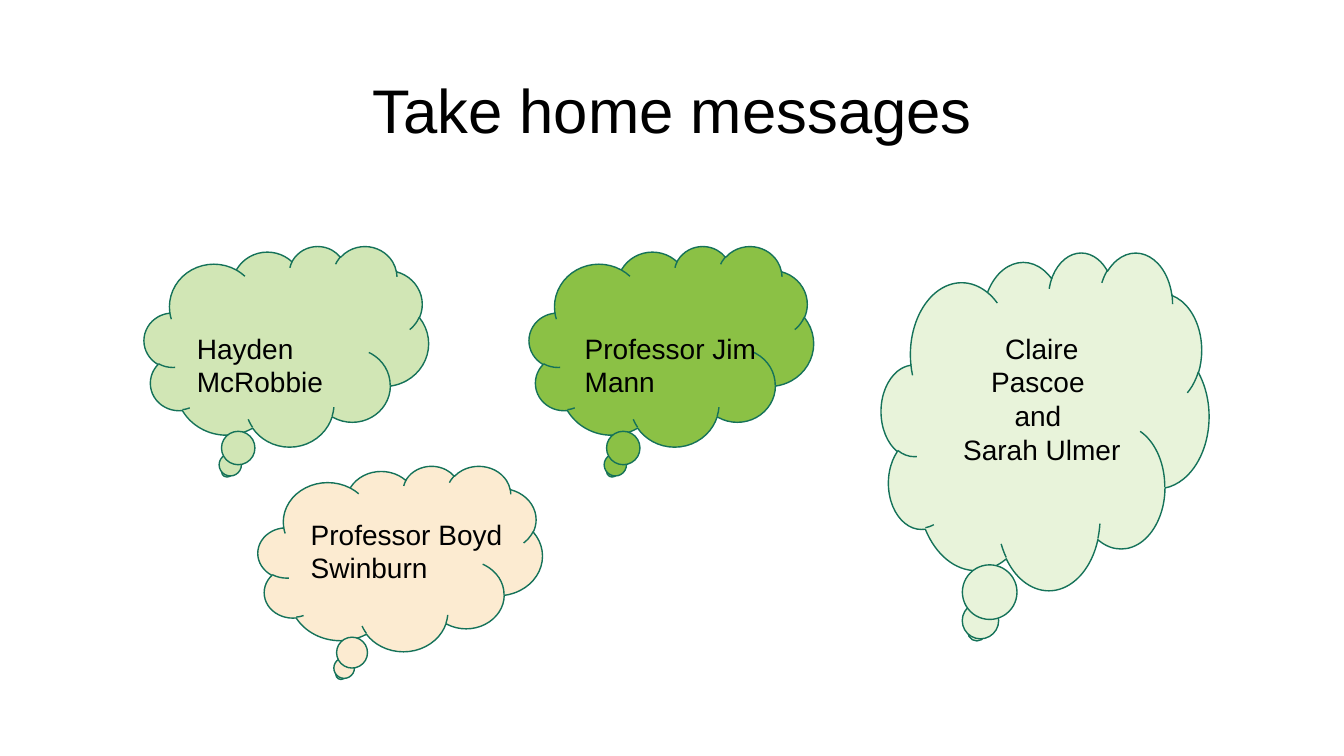
from pptx import Presentation
from pptx.dml.color import RGBColor
from pptx.enum.shapes import MSO_SHAPE
from pptx.enum.text import MSO_ANCHOR, PP_ALIGN
from pptx.util import Inches, Pt

CLOUD = MSO_SHAPE.CLOUD_CALLOUT
TOP, MIDDLE = MSO_ANCHOR.TOP, MSO_ANCHOR.MIDDLE
LEFT, CENTER = PP_ALIGN.LEFT, PP_ALIGN.CENTER
WIDE, HIGH = Inches(13.33), Inches(7.5)
INK, EDGE = "000000", "157259"

CLOUDS = [
    ((0.1073, 0.3253, 0.2116, 0.2653), "D1E6B5",
     (0.15, 0.4, 0.8, 0.39), ["Hayden McRobbie"], LEFT),
    ((0.3938, 0.3253, 0.2116, 0.2653), "8BC145",
     (0.16, 0.4, 0.73, 0.39), ["Professor Jim Mann"], LEFT),
    ((0.6557, 0.3333, 0.2438, 0.4467), "E8F3DA",
     (0.21, 0.22, 0.56, 0.43),
     ["Claire Pascoe ", "and ", "Sarah Ulmer "], CENTER),
    ((0.192, 0.616, 0.2116, 0.2453), "FCEBD1",
     (0.15, 0.25, 0.86, 0.42), ["Professor Boyd Swinburn"], LEFT),
]


def color(code):
    """Turn a hex string into a colour."""
    return RGBColor.from_string(code)


def inner(box, part):
    """Place a part, given in shares, inside a box."""
    x, y, w, h = box
    left, top, wide, high = part
    return (int(x + left * w), int(y + top * h),
            int(wide * w), int(high * h))


def label(slide, box, lines, size, align, anchor=TOP):
    """Write lines of text in a wrapping box."""
    frame = slide.shapes.add_textbox(*box).text_frame
    frame.word_wrap = True
    frame.vertical_anchor = anchor
    frame.text = "\n".join(lines)
    for para in frame.paragraphs:
        para.alignment = align
        font = para.runs[0].font
        font.name, font.size = "Arial", Pt(size)
        font.color.rgb = color(INK)
    return frame


def title(slide, box):
    """Write the slide heading."""
    frame = label(slide, box, ["Take home messages"], 44, CENTER, MIDDLE)
    frame.paragraphs[0].line_spacing = 0.9


def cloud(slide, box, fill, part, lines, align):
    """Draw a thought cloud with its speaker's name."""
    shape = slide.shapes.add_shape(CLOUD, *box)
    shape.shadow.inherit = False
    shape.fill.solid()
    shape.fill.fore_color.rgb = color(fill)
    shape.line.color.rgb = color(EDGE)
    shape.line.width = Pt(1)
    label(slide, inner(box, part), lines, 20, align)


def main():
    """Build the slide and save it."""
    deck = Presentation()
    deck.slide_width, deck.slide_height = WIDE, HIGH
    slide = deck.slides.add_slide(deck.slide_layouts[6])
    page = (0, 0, WIDE, HIGH)
    title(slide, inner(page, (0.069, 0.0533, 0.8627, 0.1933)))
    for place, *rest in CLOUDS:
        cloud(slide, inner(page, place), *rest)
    deck.save("out.pptx")


if __name__ == "__main__":
    main()
